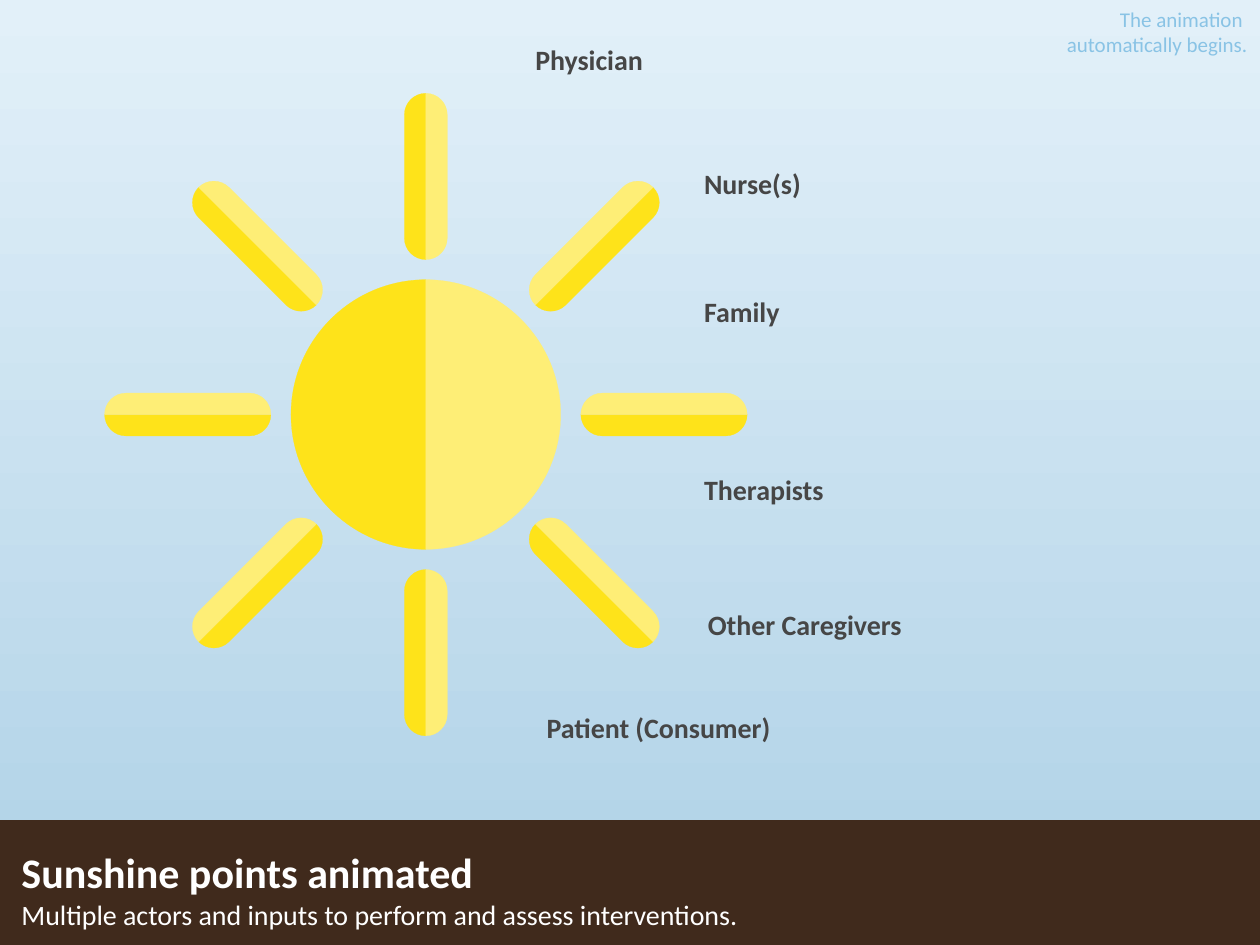
import math

import lxml.etree
import pptx
import pptx.util
import pptx.dml.color
import pptx.enum.shapes
import pptx.enum.text
import pptx.oxml.ns

C = {"sky_top": "E2F0F9", "sky_low": "AED1E6", "earth": "402A1C", "sun": "FEE31A",
     "glow": "FEEE76", "label": "464646", "hint": "89C3E5", "white": "FFFFFF"}
COLS, ROWS = 10, 7.5

prs = pptx.Presentation()
prs.slide_width, prs.slide_height = pptx.util.Inches(COLS), pptx.util.Inches(ROWS)
col, row = prs.slide_width / COLS, prs.slide_height / ROWS
s = prs.slides.add_slide(prs.slide_layouts[5])


def write(lines, sp=None, at=None, color="label", sizes=(16,), bolds=(True,), align="LEFT"):
    x, y, w, h = (int(n * unit) for n, unit in zip(at, (col, row, col, row)))
    sp = sp or s.shapes.add_textbox(x, y, w, h)
    sp.left, sp.top, sp.width, sp.height = x, y, w, h
    tf = sp.text_frame
    tf.word_wrap = True
    tf.auto_size = pptx.enum.text.MSO_AUTO_SIZE.NONE
    tf.vertical_anchor = pptx.enum.text.MSO_ANCHOR.TOP
    for i, line in enumerate(lines):
        p = tf.paragraphs[0] if i == 0 else tf.add_paragraph()
        p.alignment = getattr(pptx.enum.text.PP_ALIGN, align)
        r = p.add_run()
        r.text = line
        r.font.name = "Calibri"
        r.font.size = pptx.util.Pt(sizes[i % len(sizes)])
        r.font.bold = bolds[i % len(bolds)]
        r.font.color.rgb = pptx.dml.color.RGBColor.from_string(C[color])


def paint(sp, color):
    rgb = pptx.dml.color.RGBColor.from_string(C[color])
    sp.shadow.inherit = False
    sp.fill.solid()
    sp.fill.fore_color.rgb = rgb
    sp.line.color.rgb = rgb
    sp.line.width = pptx.util.Pt(0.1)


sky = s.background.fill
sky.gradient()
sky.gradient_angle = 270
for stop, name, position in zip(sky.gradient_stops, ("sky_top", "sky_low"), (0, 1)):
    stop.color.rgb = pptx.dml.color.RGBColor.from_string(C[name])
    stop.position = position

outline = s.shapes.build_freeform(10 * col, 6.51 * row)
outline.add_line_segments([(x * col, y * row) for x, y in ((10, 7.5), (0, 7.5), (0, 6.51))])
band = outline.convert_to_shape()
paint(band, "earth")
band.line.fill.background()
s.shapes._spTree.insert(2, band._element)

write(["Sunshine points animated",
       "Multiple actors and inputs to perform and assess interventions."],
      sp=s.shapes.title, at=(0.07, 6.67, 8.63, 0.77), color="white",
      sizes=(24, 16), bolds=(True, False))

cx, cy, bend = 3.38, 3.29, 0.55
rays = [(45 * k, 1.23, 2.55, 0.17, 1 if k < 3 else -1) for k in range(-1, 7)]
disc = (90, -1.07, 1.07, 1.07, 1)
sun = s.shapes.add_group_shape()
for angle, inner, outer, radius, dark_side in rays + [disc]:
    cos, sin = math.cos(math.radians(angle)), math.sin(math.radians(angle))
    tight = radius * (1 - bend)
    for side, name in ((dark_side, "sun"), (-dark_side, "glow")):
        half = [(inner, 0), (inner, radius * bend), (inner + tight, radius),
                (inner + radius, radius), (outer - radius, radius),
                (outer - tight, radius), (outer, radius * bend), (outer, 0)]
        points = [((cx + u * cos - side * v * sin) * col,
                   (cy + u * sin + side * v * cos) * row) for u, v in half]
        outline = sun.shapes.build_freeform(*points[0])
        outline.add_line_segments(points[1:], close=True)
        sp = outline.convert_to_shape()
        paint(sp, name)
        edges = sp._element.xpath(".//a:lnTo")
        for corner in (edges[:3], edges[4:7]):
            curve = lxml.etree.Element(pptx.oxml.ns.qn("a:cubicBezTo"))
            corner[0].addprevious(curve)
            for edge in corner:
                curve.append(edge[0])
                edge.getparent().remove(edge)

labels = [("Physician", 4.15, 0.29), ("Nurse(s)", 5.49, 1.27), ("Family", 5.49, 2.29),
          ("Therapists", 5.49, 3.7), ("Other Caregivers", 5.52, 4.77),
          ("Patient (Consumer)", 4.24, 5.59)]
for label, x, y in labels:
    write([label], at=(x, y, 3.73, 0.37))

write(["The animation ", "automatically begins."], at=(7.87, 0, 2.13, 0.5),
      color="hint", sizes=(12,), bolds=(False,), align="RIGHT")

prs.save("out.pptx")
